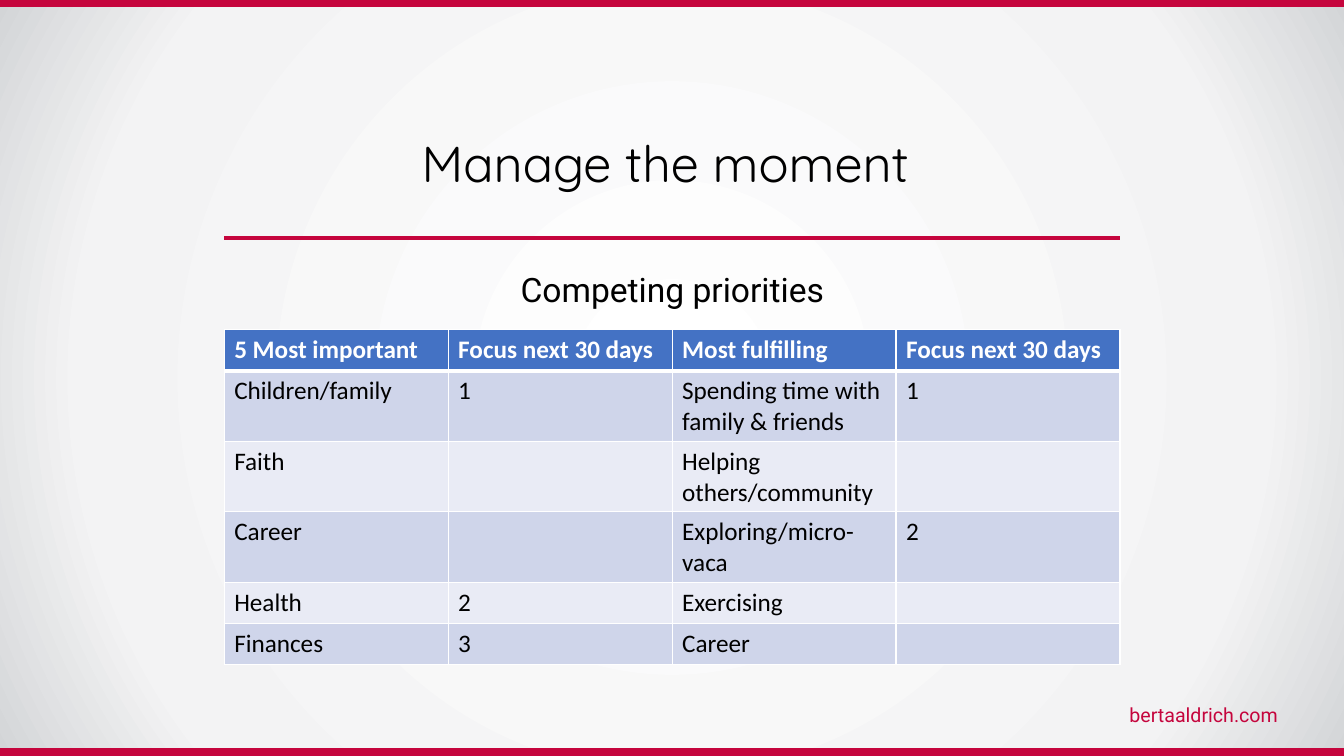
from pptx import Presentation
from pptx.dml.color import RGBColor
from pptx.enum import shapes, text
from pptx.oxml import parse_xml
from pptx.oxml.ns import nsdecls, qn
from pptx.util import Cm, Pt
from lxml import etree

CRIMSON, BLACK, WHITE = "C5053D", "000000", "FFFFFF"
HEADER_FILL, BAND_FILLS = "4472C4", ("CFD5EA", "E9EBF5")
BACKGROUND_STOPS = ((0, "FFFFFF"), (77, "F3F3F4"), (100, "D3D5D7"))
PRIORITIES = (
    ("5 Most important", "Focus next 30 days", "Most fulfilling", "Focus next 30 days"),
    ("Children/family", "1", "Spending time with family & friends", "1"),
    ("Faith", "", "Helping others/community", ""),
    ("Career", "", "Exploring/micro-vaca", "2"),
    ("Health", "2", "Exercising", ""),
    ("Finances", "3", "Career", ""),
)


def rgb(color):
    return RGBColor.from_string(color)


def set_font(p, name, size, color, bold=False):
    p.font.name = name
    p.font.size = Pt(size)
    p.font.bold = bold
    p.font.color.rgb = rgb(color)


def set_background(slide):
    slide.background.fill.solid()
    stops = "".join(
        f'<a:gs pos="{pos * 1000}"><a:srgbClr val="{color}"/></a:gs>'
        for pos, color in BACKGROUND_STOPS
    )
    gradient = parse_xml(
        f'<a:gradFill {nsdecls("a")} rotWithShape="1"><a:gsLst>{stops}</a:gsLst>'
        '<a:path path="circle"><a:fillToRect l="50000" t="50000" r="50000" b="50000"/>'
        "</a:path></a:gradFill>"
    )
    solid = slide.element.find(".//" + qn("p:bgPr")).find(qn("a:solidFill"))
    solid.getparent().replace(solid, gradient)


def add_bar(slide, top, width):
    sp = slide.shapes.add_shape(shapes.MSO_SHAPE.RECTANGLE, 0, Cm(top), width, Cm(0.18))
    sp.shadow.inherit = False
    sp.fill.solid()
    sp.fill.fore_color.rgb = rgb(CRIMSON)
    sp.line.color.rgb = rgb(CRIMSON)
    sp.line.width = Pt(1)


def add_text(slide, box, content, font, size, color, align, anchor, spacing=1.0):
    sp = slide.shapes.add_textbox(*(Cm(v) for v in box))
    tf = sp.text_frame
    tf.word_wrap = True
    tf.vertical_anchor = anchor
    p = tf.paragraphs[0]
    p.text = content
    p.alignment = align
    p.line_spacing = spacing
    set_font(p, font, size, color)


def add_rule(slide, left, right, y):
    line = slide.shapes.add_connector(
        shapes.MSO_CONNECTOR.STRAIGHT, Cm(left), Cm(y), Cm(right), Cm(y)
    )
    line.line.color.rgb = rgb(CRIMSON)
    line.line.width = Pt(3)
    etree.SubElement(line.element.spPr, qn("a:effectLst"))


def set_borders(cell, top, bottom):
    widths = {"lnL": 1, "lnR": 1, "lnT": top, "lnB": bottom}
    for i, (side, width) in enumerate(widths.items()):
        border = parse_xml(
            f'<a:{side} {nsdecls("a")} w="{Pt(width)}"><a:solidFill>'
            f'<a:srgbClr val="{WHITE}"/></a:solidFill></a:{side}>'
        )
        cell._tc.get_or_add_tcPr().insert(i, border)


def add_priorities(slide, left, top, width, row_height):
    rows, cols = len(PRIORITIES), len(PRIORITIES[0])
    table = slide.shapes.add_table(
        rows, cols, Cm(left), Cm(top), Cm(width), Cm(row_height * rows)
    ).table
    for r, values in enumerate(PRIORITIES):
        header = r == 0
        for c, value in enumerate(values):
            cell = table.cell(r, c)
            cell.text = value
            cell.fill.solid()
            cell.fill.fore_color.rgb = rgb(HEADER_FILL if header else BAND_FILLS[(r - 1) % 2])
            set_borders(cell, 3 if r == 1 else 1, 3 if header else 1)
            p = cell.text_frame.paragraphs[0]
            set_font(p, "Calibri", 18, WHITE if header else BLACK, header)


def main():
    prs = Presentation()
    prs.slide_width, prs.slide_height = Cm(33.87), Cm(19.05)
    slide = prs.slides.add_slide(prs.slide_layouts[6])
    center, right = text.PP_ALIGN.CENTER, text.PP_ALIGN.RIGHT
    top, middle = text.MSO_ANCHOR.TOP, text.MSO_ANCHOR.MIDDLE

    set_background(slide)
    for bar_top in (18.87, -0.02):
        add_bar(slide, bar_top, prs.slide_width)
    add_text(slide, (24.13, 17.6, 8.33, 0.86), "bertaaldrich.com",
             "Roboto", 14, CRIMSON, right, top)
    add_text(slide, (5.66, 3.43, 22.56, 1.5), "Manage the moment ",
             "Quicksand", 36, BLACK, center, middle, 0.9)
    add_text(slide, (2.34, 6.76, 29.21, 7.95), "Competing priorities",
             "Roboto", 24, BLACK, center, top, 0.9)
    add_rule(slide, 5.65, 28.22, 6)
    add_priorities(slide, 5.65, 8.31, 22.58, 1.03)
    prs.save("out.pptx")


if __name__ == "__main__":
    main()
